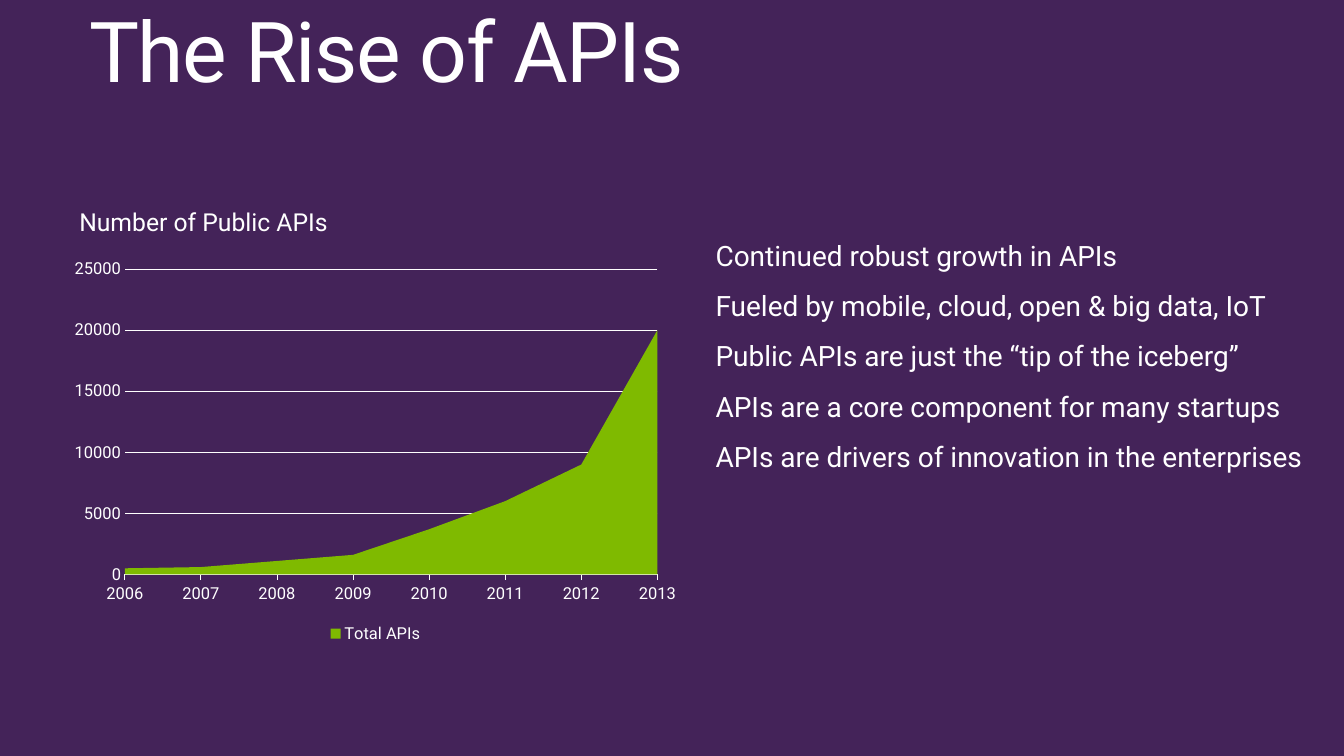
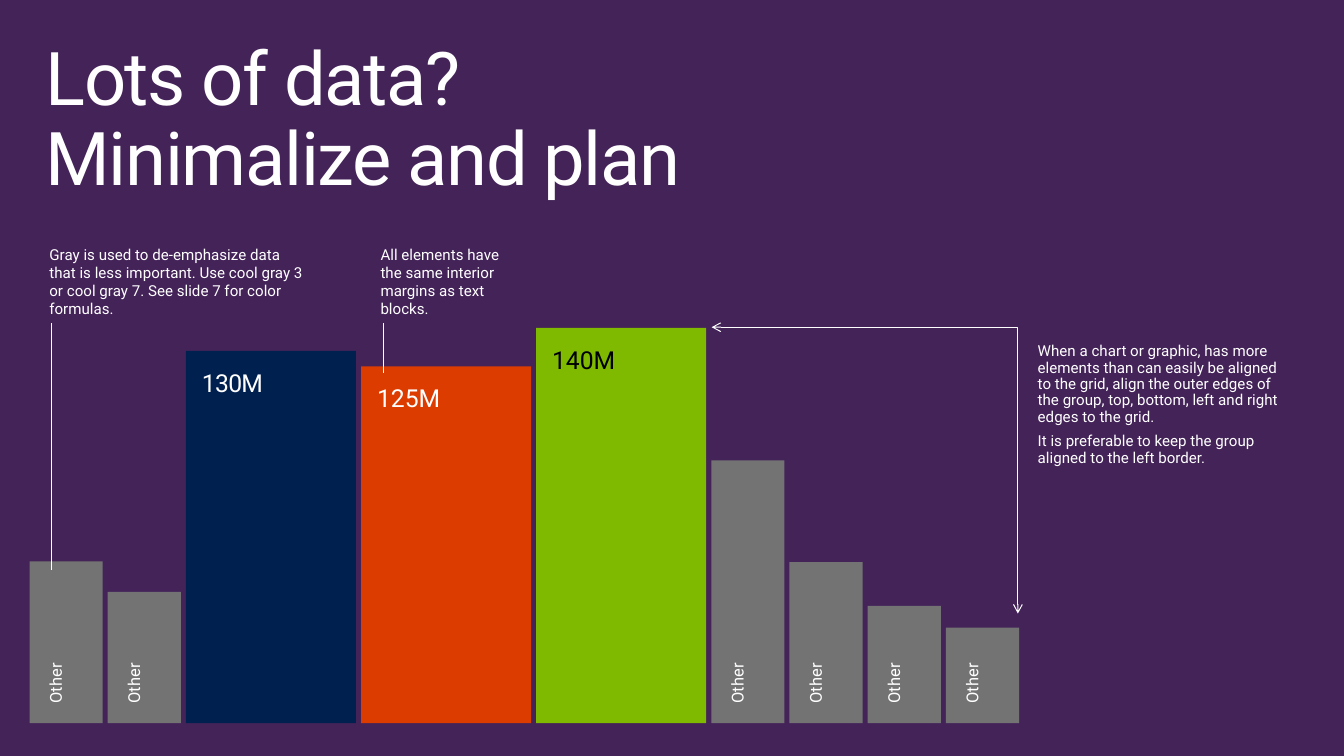
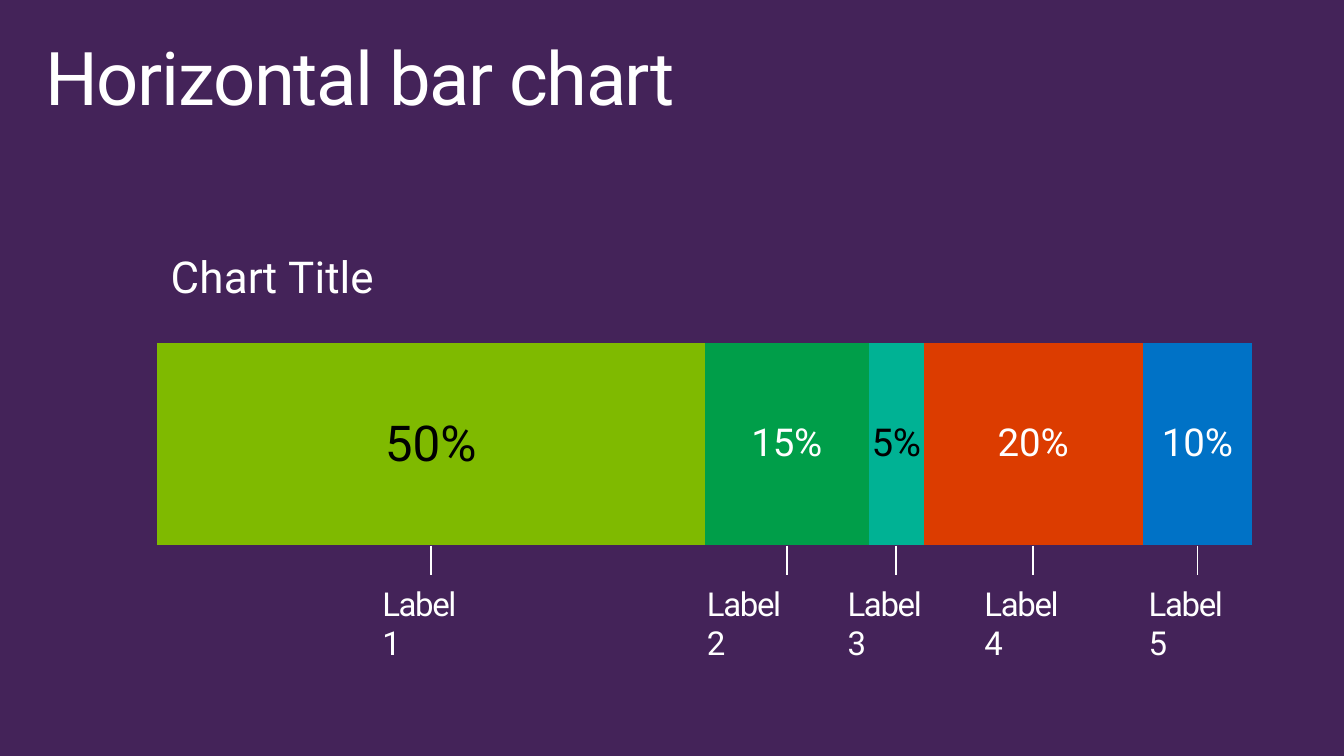
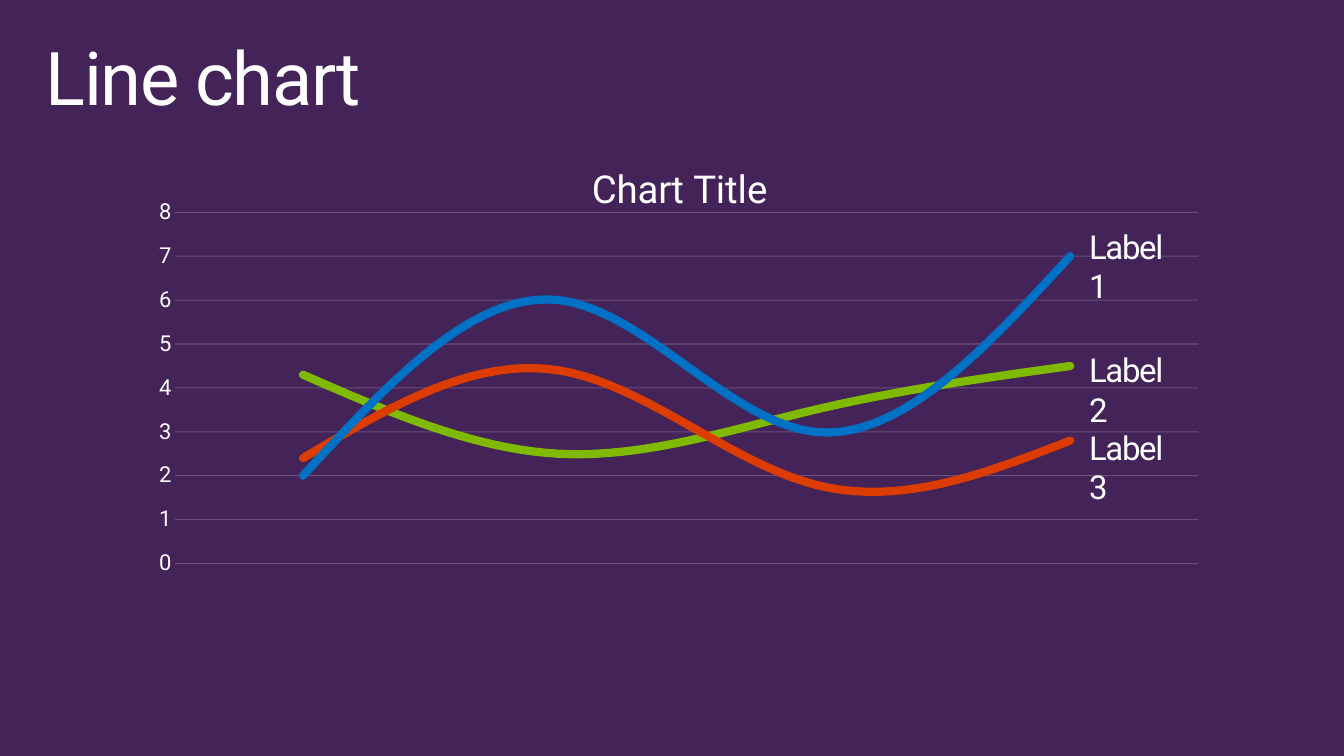
from pptx import Presentation
from pptx.chart.data import CategoryChartData
from pptx.dml.color import RGBColor
from pptx.enum.chart import XL_CHART_TYPE, XL_LABEL_POSITION, XL_LEGEND_POSITION, XL_TICK_MARK
from pptx.enum.shapes import MSO_CONNECTOR, MSO_SHAPE
from pptx.enum.text import MSO_ANCHOR, PP_ALIGN
from pptx.oxml import parse_xml
from pptx.oxml.ns import nsdecls, qn
from pptx.oxml.xmlchemy import OxmlElement
from pptx.util import Cm, Pt

FONT = "Roboto"
HEX = {
    "back": "442359", "white": "FFFFFF", "black": "000000", "gray": "737373",
    "navy": "002050", "orange": "DC3C00", "lime": "7FBA00", "green": "009E49",
    "teal": "00B294", "blue": "0072C6",
}
RGB = {name: RGBColor.from_string(code) for name, code in HEX.items()}


def write(shape, lines, size, ink="white", pad=(0.25, 0.13), lead=None, after=None, track=None):
    """Fill a shape with top-left text; pad is (sides, top and bottom) in cm."""
    frame = shape.text_frame
    frame.word_wrap = True
    frame.vertical_anchor = MSO_ANCHOR.TOP
    frame.margin_left = frame.margin_right = Cm(pad[0])
    frame.margin_top = frame.margin_bottom = Cm(pad[1])
    for n, line in enumerate(lines):
        para = frame.add_paragraph() if n else frame.paragraphs[0]
        para.text = line
        para.alignment = PP_ALIGN.LEFT
        para.line_spacing = lead
        if after:
            para.space_after = Pt(after)
        para.font.name = FONT
        para.font.size = Pt(size)
        para.font.color.rgb = RGB[ink]
        if track:
            para._p.pPr.find(qn("a:defRPr")).set("spc", str(track))


def plot(slide, kind, box, cats, rows, size, title, big, spot, area):
    """Add a titled chart; spot and area are fractions of the chart's size."""
    data = CategoryChartData()
    data.categories = cats
    for n, (name, vals) in enumerate(rows, 1):
        data.add_series(name or f"Series {n}", vals)
    chart = slide.shapes.add_chart(kind, *map(Cm, box), data).chart
    chart.has_legend = False
    chart.font.name = FONT
    chart.font.size = Pt(size)
    chart.font.color.rgb = RGB["white"]
    head = chart.chart_title
    head.text_frame.text = title
    font = head.text_frame.paragraphs[0].runs[0].font
    font.name, font.size, font.bold = FONT, Pt(big), False
    font.color.rgb = RGB["white"]
    field = chart._chartSpace.chart.plotArea
    for host, at, inner, marks in ((head._element, 1, "", spot), (field, 0, "inner", area)):
        for old in host.findall(qn("c:layout")):
            host.remove(old)
        body = '<c:layoutTarget val="inner"/>' if inner else ""
        body += '<c:xMode val="edge"/><c:yMode val="edge"/>'
        body += "".join(f'<c:{tag} val="{mark}"/>' for tag, mark in zip("xywh", marks))
        host.insert(at, parse_xml(
            f'<c:layout {nsdecls("c")}><c:manualLayout>{body}</c:manualLayout></c:layout>'))
    return chart


deck = Presentation()
deck.slide_width, deck.slide_height = Cm(34.54), Cm(19.43)

# Slides and titles
LOW = (0.76, 0.81, 33.02, 2.54)
slides = []
for title, box, size in (
    ("The Rise of APIs", (1.88, 0, 31.39, 3.76), 61.2),
    ("Lots of data?\vMinimalize and plan", LOW, 54),
    ("Horizontal bar chart", LOW, 54),
    ("Line chart", LOW, 54),
):
    slide = deck.slides.add_slide(deck.slide_layouts[6])
    slide.background.fill.solid()
    slide.background.fill.fore_color.rgb = RGB["back"]
    write(slide.shapes.add_textbox(*map(Cm, box)), [title], size,
          pad=(0.41, 0.25), lead=0.9, track=-100)
    slides.append(slide)
rise, lots, bars, curves = slides

# Growth of public APIs
chart = plot(
    rise, XL_CHART_TYPE.AREA_STACKED, (1.6, 4.93, 16.1, 11.71),
    [str(year) for year in range(2006, 2014)],
    [("Total APIs", (500, 600, 1100, 1600, 3700, 6000, 9000, 20000))],
    12, "Number of Public APIs", 18, (0.02, 0.02), (0.1, 0.17, 0.85, 0.67))
chart.has_legend = True
chart.legend.position = XL_LEGEND_POSITION.BOTTOM
chart.legend.include_in_layout = False
fill = chart.series[0].format.fill
fill.solid()
fill.fore_color.rgb = RGB["lime"]
years, totals = chart.category_axis, chart.value_axis
years.has_major_gridlines = False
years.major_tick_mark = XL_TICK_MARK.OUTSIDE
totals.minimum_scale, totals.maximum_scale, totals.major_unit = 0, 25000, 5000
totals.major_tick_mark = XL_TICK_MARK.NONE
totals.format.line.fill.background()
totals._element.find(qn("c:crossBetween")).set("val", "midCat")
for line in (years.format.line, totals.major_gridlines.format.line):
    line.width = Pt(0.75)
    line.color.rgb = RGB["white"]

write(rise.shapes.add_textbox(Cm(18.14), Cm(5.99), Cm(15.82), Cm(9.6)), [
    "Continued robust growth in APIs",
    "Fueled by mobile, cloud, open & big data, IoT",
    "Public APIs are just the “tip of the iceberg”",
    "APIs are a core component for many startups",
    "APIs are drivers of innovation in the enterprises",
], 20.4, after=12.2)

# Columns drawn on a common base
BASE, GAP = 18.59, 0.13
left = 0.76
for label, high, tint, ink in (
    ("Other", 4.16, "gray", "white"),
    ("Other", 3.38, "gray", "white"),
    ("130M", 9.57, "navy", "white"),
    ("125M", 9.17, "orange", "white"),
    ("140M", 10.16, "lime", "black"),
    ("Other", 6.76, "gray", "white"),
    ("Other", 4.14, "gray", "white"),
    ("Other", 3.02, "gray", "white"),
    ("Other", 2.46, "gray", "white"),
):
    minor = label == "Other"
    wide = 1.88 if minor else 4.37
    bar = lots.shapes.add_shape(
        MSO_SHAPE.RECTANGLE, Cm(left), Cm(BASE - high), Cm(wide), Cm(high))
    bar.shadow.inherit = False
    bar.fill.solid()
    bar.fill.fore_color.rgb = RGB[tint]
    bar.line.fill.background()
    write(bar, [label], 12 if minor else 18, ink, pad=(0.41, 0.51),
          lead=None if minor else 0.9, track=-50 if label == "130M" else None)
    if minor:
        bar.text_frame._txBody.bodyPr.set("vert", "vert270")
    left += wide + GAP

for box, lines, lead, after in (
    ((0.76, 5.89, 7.62, 1.75),
     ["Gray is used to de-emphasize data that is less important. "
      "Use cool gray 3 or cool gray 7. See slide 7 for color formulas."], None, None),
    ((9.27, 5.89, 4.19, 1.75),
     ["All elements have the same interior margins as text blocks."], None, None),
    ((26.16, 8.43, 7.62, 5.08),
     ["When a chart or graphic, has more elements than can easily be aligned to the grid, "
      "align the outer edges of the group, top, bottom, left and right edges to the grid.",
      "It is preferable to keep the group aligned to the left border."], 0.9, 6),
):
    write(lots.shapes.add_textbox(*map(Cm, box)), lines, 11,
          pad=(0.51, 0.41), lead=lead, after=after)

path = lots.shapes.build_freeform(Cm(26.16), Cm(15.77))
path.add_line_segments([(Cm(26.16), Cm(8.41)), (Cm(18.29), Cm(8.41))], close=False)
guide = path.convert_to_shape()
guide.shadow.inherit = False
guide.fill.background()
guide.line.width = Pt(0.75)
guide.line.color.rgb = RGB["white"]
for tag in ("a:headEnd", "a:tailEnd"):
    end = OxmlElement(tag)
    end.set("type", "arrow")
    guide.line._get_or_add_ln().append(end)

# Stacked bar with labelled shares
shares = (
    (0.5, "lime", "black", 36),
    (0.15, "green", "white", 28),
    (0.05, "teal", "black", 28),
    (0.2, "orange", "white", 28),
    (0.1, "blue", "white", 28),
)
chart = plot(
    bars, XL_CHART_TYPE.BAR_STACKED_100, (0, 4.93, 32.18, 11.15), ["1"],
    [(None, [share[0]]) for share in shares],
    10, "Chart Title", 32, (0.13, 0.11), (0.1255, 0.163, 0.8745, 0.837))
chart.plots[0].gap_width, chart.plots[0].overlap = 79, 100
chart.value_axis.has_major_gridlines = False
chart.value_axis.maximum_scale = 1
chart.category_axis.visible = chart.value_axis.visible = False

ticks = [(lots, 1.32, 8.31, 14.66, 0.75), (lots, 9.86, 8.31, 9.58, 0.75)]
start = 0
for n, (series, (share, tint, ink, size)) in enumerate(zip(chart.series, shares), 1):
    series.format.fill.solid()
    series.format.fill.fore_color.rgb = RGB[tint]
    tags = series.data_labels
    tags.show_value = True
    tags.position = XL_LABEL_POSITION.CENTER
    tags.number_format, tags.number_format_is_linked = "0%", False
    tags.font.name, tags.font.size = FONT, Pt(size)
    tags.font.color.rgb = RGB[ink]
    mid = 4.04 + 28.14 * (start + share / 2)
    start += share
    ticks.append((bars, mid, 14.02, 14.78, 1.25))
    shift = 2.3 if n == 2 else 1.5
    write(bars.shapes.add_textbox(Cm(mid - shift), Cm(14.86), Cm(2.8), Cm(1.27)),
          [f"Label {n}"], 24, track=-100)

# Upright pointer lines
for slide, x, top, foot, width in ticks:
    tick = slide.shapes.add_connector(MSO_CONNECTOR.STRAIGHT, Cm(x), Cm(top), Cm(x), Cm(foot))
    tick.line.width = Pt(width)
    tick.line.color.rgb = RGB["white"]
    tick._element.spPr.append(OxmlElement("a:effectLst"))

# Smooth lines
chart = plot(
    curves, XL_CHART_TYPE.LINE, (3.3, 3.4, 27.94, 12.7), ["1", "2", "3", "4"],
    [(None, (4.3, 2.5, 3.5, 4.5)), (None, (2.4, 4.4, 1.8, 2.8)), (None, (2, 6, 3, 7))],
    16, "Chart Title", 28, (0.42, 0.05), (0.043, 0.162, 0.941, 0.711))
for series, tint in zip(chart.series, ("lime", "orange", "blue")):
    series.smooth = True
    series.format.line.width = Pt(6)
    series.format.line.color.rgb = RGB[tint]
    series.format.line._get_or_add_ln().set("cap", "rnd")
chart.category_axis.visible = False
scale = chart.value_axis
scale.minimum_scale, scale.maximum_scale, scale.major_unit = 0, 8, 1
scale.major_tick_mark = XL_TICK_MARK.NONE
scale.format.line.fill.background()
grid = scale.major_gridlines.format.line
grid.width = Pt(0.75)
grid.color.rgb = RGB["white"]
alpha = OxmlElement("a:alpha")
alpha.set("val", "20000")
grid._get_or_add_ln().find(".//" + qn("a:srgbClr")).append(alpha)
for n, top in enumerate((5.69, 8.86, 10.85), 1):
    write(curves.shapes.add_textbox(Cm(27.74), Cm(top), Cm(2.8), Cm(1.27)),
          [f"Label {n}"], 24, track=-100)

deck.save("out.pptx")
